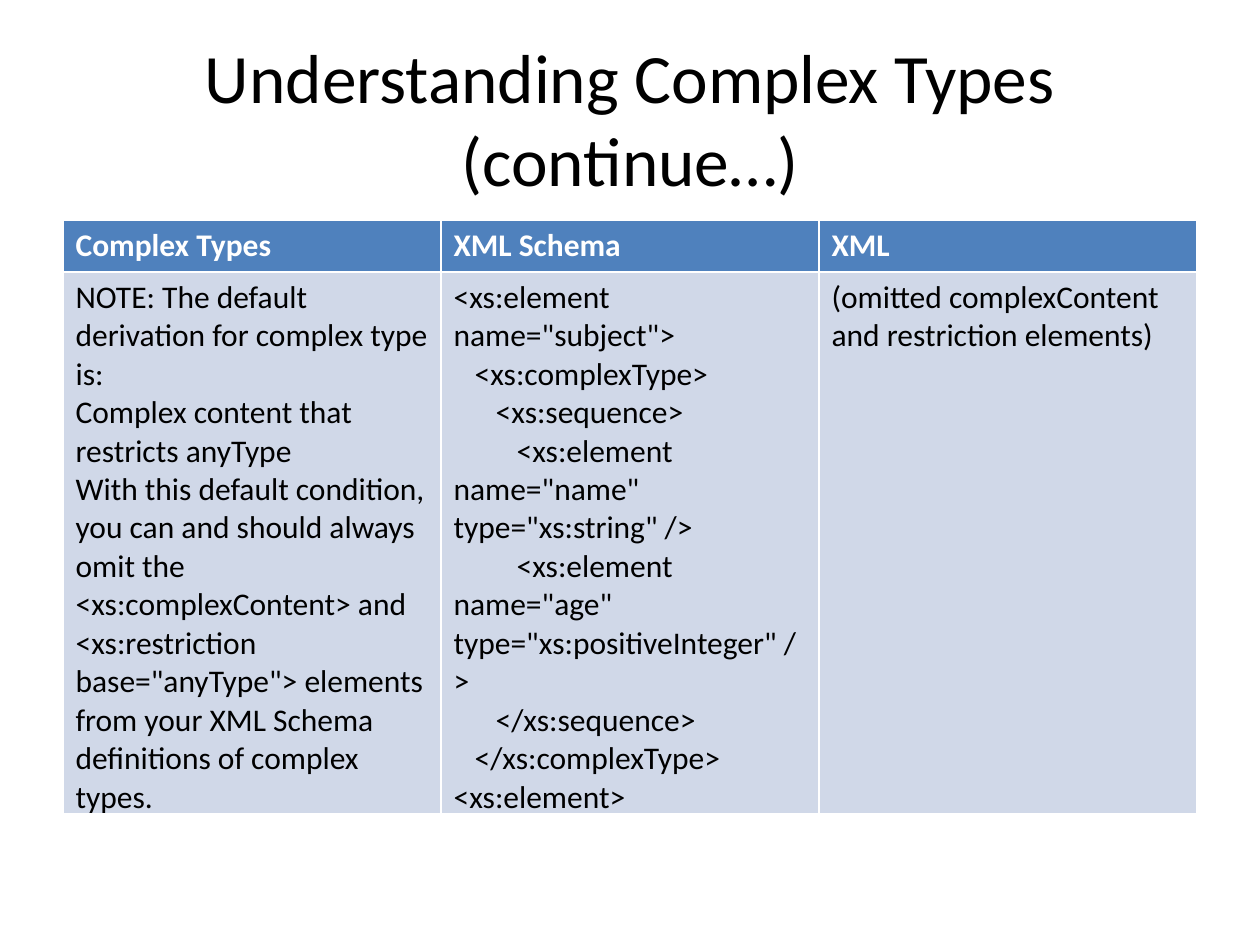
"""Build a slide that explains the default derivation of XML Schema complex types."""
from pptx import Presentation
from pptx.dml.color import RGBColor
from pptx.enum.text import MSO_ANCHOR as Anchor, PP_ALIGN as Align
from pptx.util import Pt

PX = 914400 / 126
FONT = "Calibri"
BLACK = RGBColor(0x00, 0x00, 0x00)
WHITE = RGBColor(0xFF, 0xFF, 0xFF)
HEADER_BLUE = RGBColor(0x4F, 0x81, 0xBD)
BODY_BLUE = RGBColor(0xD0, 0xD8, 0xE8)
CODE_INDENT = 21
ROW_HEIGHTS = [52, 542]
HEADERS = ["Complex Types", "XML Schema", "XML"]
NOTE = [
    (0, "NOTE: The default derivation for complex type is:"),
    (0, "Complex content that restricts anyType"),
    (0, "With this default condition, you can and should always omit the "
        "<xs:complexContent> and <xs:restriction base=\"anyType\"> elements "
        "from your XML Schema definitions of complex types."),
]
SCHEMA = [
    (0, "<xs:element name=\"subject\">"),
    (1, "<xs:complexType>"),
    (2, "<xs:sequence>"),
    (3, "<xs:element name=\"name\" type=\"xs:string\" />"),
    (3, "<xs:element name=\"age\" type=\"xs:positiveInteger\" />"),
    (2, "</xs:sequence>"),
    (1, "</xs:complexType>"),
    (0, "<xs:element>"),
]
XML = [(0, "(omitted complexContent and restriction elements)")]
ROWS = [
    ([[(0, header)] for header in HEADERS], HEADER_BLUE, WHITE, True),
    ([NOTE, SCHEMA, XML], BODY_BLUE, BLACK, False),
]


def px(*lengths):
    return [round(length * PX) for length in lengths]


def style(paragraph, size, color, bold=False):
    paragraph.font.name = FONT
    paragraph.font.size = Pt(size)
    paragraph.font.color.rgb = color
    paragraph.font.bold = bold


presentation = Presentation()
presentation.slide_width, presentation.slide_height = px(1260, 945)
slide = presentation.slides.add_slide(presentation.slide_layouts[6])

title = slide.shapes.add_textbox(*px(63, 38, 1134, 158)).text_frame
title.word_wrap = True
title.vertical_anchor = Anchor.MIDDLE
title.text = "Understanding Complex Types (continue…)"
title.paragraphs[0].alignment = Align.CENTER
style(title.paragraphs[0], 39.6, BLACK)

table = slide.shapes.add_table(2, 3, *px(63, 220, 1134, sum(ROW_HEIGHTS))).table
for row, height in zip(table.rows, px(*ROW_HEIGHTS)):
    row.height = height

for row, (contents, fill, color, bold) in zip(table.rows, ROWS):
    for cell, lines in zip(row.cells, contents):
        cell.fill.solid()
        cell.fill.fore_color.rgb = fill
        cell.text = "\n".join(text for level, text in lines)
        for paragraph, (level, text) in zip(cell.text_frame.paragraphs, lines):
            style(paragraph, 18, color, bold)
            if level:
                properties = paragraph._p.get_or_add_pPr()
                properties.set("marL", "0")
                properties.set("indent", str(px(level * CODE_INDENT)[0]))

presentation.save("out.pptx")
